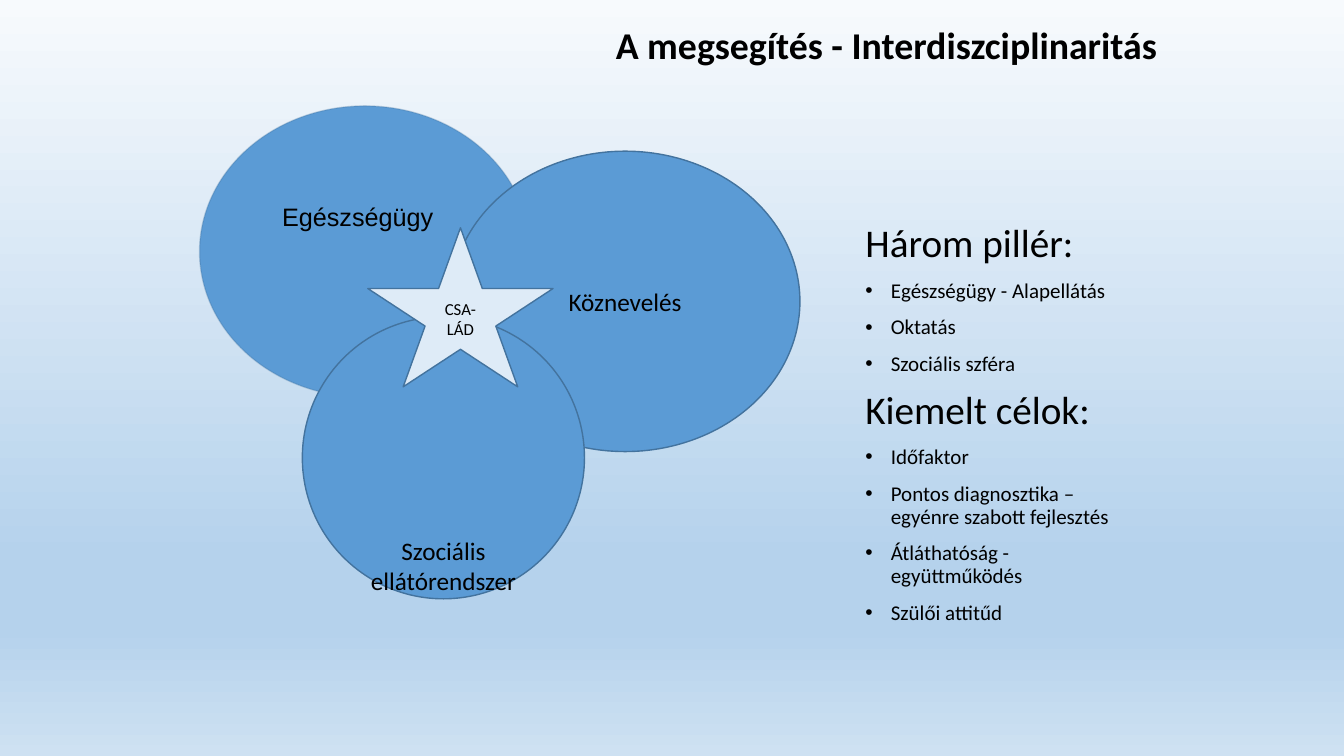
from lxml import etree
from pptx import Presentation
from pptx.dml.color import RGBColor
from pptx.enum.shapes import MSO_SHAPE
from pptx.enum.text import MSO_ANCHOR, PP_ALIGN
from pptx.oxml.ns import qn
from pptx.util import Cm, Pt

BLACK = RGBColor(0x00, 0x00, 0x00)
BLUE = RGBColor(0x5B, 0x9B, 0xD5)
PALE_BLUE = RGBColor(0xDE, 0xEB, 0xF7)
OUTLINE = RGBColor(0x43, 0x73, 0x9E)
GRADIENT = (
    (0, RGBColor(0xF7, 0xFA, 0xFD)),
    (74, RGBColor(0xB5, 0xD2, 0xEC)),
    (83, RGBColor(0xB5, 0xD2, 0xEC)),
    (100, RGBColor(0xCE, 0xE1, 0xF2)),
)
ELLIPSE, STAR = MSO_SHAPE.OVAL, MSO_SHAPE.STAR_5_POINT
TOP, MIDDLE = MSO_ANCHOR.TOP, MSO_ANCHOR.MIDDLE
LEFT, CENTER, RIGHT = PP_ALIGN.LEFT, PP_ALIGN.CENTER, PP_ALIGN.RIGHT

PILLARS = ("Egészségügy - Alapellátás", "Oktatás", "Szociális szféra")
GOALS = (
    "Időfaktor",
    "Pontos diagnosztika – egyénre szabott fejlesztés",
    "Átláthatóság - együttműködés",
    "Szülői attitűd",
)


def write_text(paragraph, text, size=18, font="Calibri", bold=False, align=CENTER):
    """Write one formatted run into a paragraph."""
    paragraph.alignment = align
    run = paragraph.add_run()
    run.text = text
    run.font.size = Pt(size)
    run.font.name = font
    run.font.bold = bold
    run.font.color.rgb = BLACK


def add_bullet(paragraph):
    """Give a paragraph a round bullet and a hanging indent."""
    properties = paragraph._p.get_or_add_pPr()
    properties.set("marL", str(Cm(0.64)))
    properties.set("indent", str(-Cm(0.64)))
    etree.SubElement(properties, qn("a:buFont"), typeface="Arial")
    etree.SubElement(properties, qn("a:buChar"), char="•")


def paint_background(slide):
    """Fill the slide with the vertical blue gradient."""
    slide.background.fill.gradient()
    gradient = slide.element.find(".//" + qn("a:gradFill"))
    stops = gradient.find(qn("a:gsLst"))
    for stop in list(stops):
        stops.remove(stop)
    for position, color in GRADIENT:
        stop = etree.SubElement(stops, qn("a:gs"), pos=str(position * 1000))
        etree.SubElement(stop, qn("a:srgbClr"), val=str(color))
    gradient.find(qn("a:lin")).set("ang", str(90 * 60000))


def place_title(slide, left, top, width, height):
    """Move and format the title placeholder."""
    title = slide.shapes.title
    title.left, title.top, title.width, title.height = left, top, width, height
    frame = title.text_frame
    frame.word_wrap = True
    frame.vertical_anchor = TOP
    frame.margin_right = Cm(0.48)
    paragraph = frame.paragraphs[0]
    paragraph.line_spacing = 0.9
    write_text(paragraph, "A megsegítés - Interdiszciplinaritás", size=27, bold=True, align=RIGHT)


def add_figure(slide, kind, left, top, width, height, text="", fill=BLUE, size=18, opacity=100):
    """Add an outlined shape with an optional centred label."""
    shape = slide.shapes.add_shape(kind, left, top, width, height)
    shape.shadow.inherit = False
    shape.fill.solid()
    shape.fill.fore_color.rgb = fill
    shape.line.color.rgb = OUTLINE
    shape.line.width = Pt(1)
    if opacity < 100:
        color = shape.line._ln.find(".//" + qn("a:srgbClr"))
        etree.SubElement(color, qn("a:alpha"), val=str(opacity * 1000))
    if text:
        shape.text_frame.word_wrap = True
        shape.text_frame.vertical_anchor = MIDDLE
        write_text(shape.text_frame.paragraphs[0], text, size=size)


def add_label(slide, left, top, width, height, text, **text_format):
    """Add a text box that labels a circle."""
    frame = slide.shapes.add_textbox(left, top, width, height).text_frame
    frame.word_wrap = True
    write_text(frame.paragraphs[0], text, **text_format)


def draw_diagram(slide, left, top):
    """Draw the three overlapping fields around the family star."""
    add_figure(slide, ELLIPSE, left, top, Cm(8.33), Cm(7.34), opacity=29)
    add_figure(slide, ELLIPSE, left + Cm(6.32), top + Cm(1.14), Cm(8.81), Cm(7.57), "Köznevelés")
    add_figure(slide, ELLIPSE, left + Cm(2.59), top + Cm(5.31), Cm(7.11), Cm(7.11))
    add_label(slide, left + Cm(3.63), top + Cm(10.69), Cm(5.03), Cm(1.73),
              "Szociális ellátórendszer")
    add_label(slide, left + Cm(1.83), top + Cm(2.28), Cm(4.67), Cm(1.02),
              "Egészségügy", font="Arial", align=LEFT)
    add_figure(slide, STAR, left + Cm(4.24), top + Cm(3.07), Cm(4.67), Cm(4.01),
               "CSA- LÁD", fill=PALE_BLUE, size=12)


def list_points(slide, left, top, width, height):
    """List the pillars and goals under their headings."""
    frame = slide.shapes.add_textbox(left, top, width, height).text_frame
    frame.word_wrap = True
    frame.margin_top = Cm(1.07)
    paragraph = frame.paragraphs[0]
    for heading, points in (("Három pillér:", PILLARS), ("Kiemelt célok:", GOALS)):
        for text in (heading, *points):
            if paragraph.runs:
                paragraph = frame.add_paragraph()
                paragraph.space_before = Pt(10)
            paragraph.line_spacing = 0.9
            write_text(paragraph, text, size=28 if text == heading else 15, align=LEFT)
            if text != heading:
                add_bullet(paragraph)


def main():
    """Build the slide and save it."""
    presentation = Presentation()
    presentation.slide_width, presentation.slide_height = Cm(33.87), Cm(19.05)
    slide = presentation.slides.add_slide(presentation.slide_layouts[5])
    paint_background(slide)
    place_title(slide, Cm(9.83), Cm(0.56), Cm(19.81), Cm(2.39))
    list_points(slide, Cm(21.56), Cm(4.57), Cm(7.39), Cm(11.53))
    draw_diagram(slide, Cm(5.03), Cm(2.67))
    presentation.save("out.pptx")


if __name__ == "__main__":
    main()
